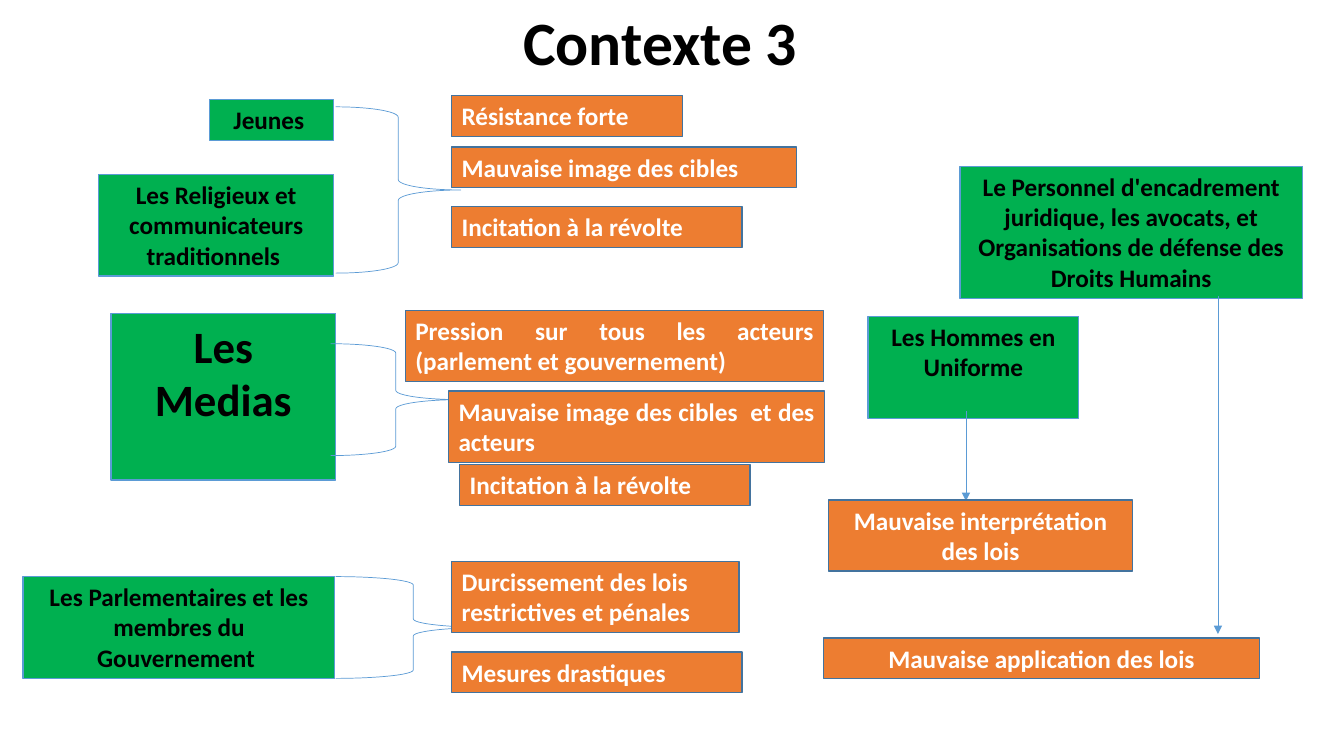
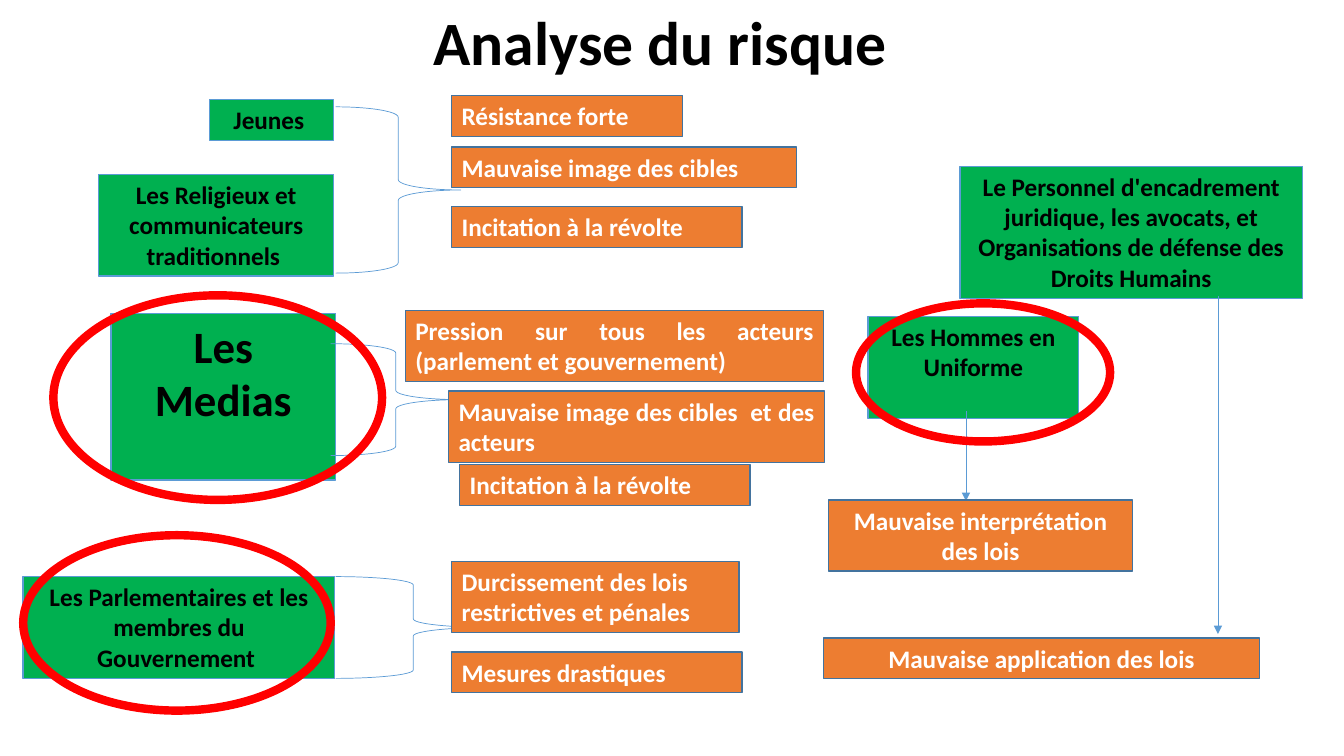
"""Build two stakeholder maps, the second with the main risks circled."""
from pptx import Presentation
from pptx import util as u
from pptx.dml.color import RGBColor
from pptx.enum import shapes, text
from pptx.oxml import parse_xml
from pptx.oxml.ns import nsdecls

COLORS = {"green": "00B050", "orange": "ED7D31", "blue": "5B9BD5",
          "steel": "43739E", "red": "FF0000", "black": "000000", "white": "FFFFFF"}
RGB = {name: RGBColor.from_string(value) for name, value in COLORS.items()}
CELL = u.Inches(0.1)
LINE_ROWS = 3.03
LEFT, CENTER, JUSTIFY = (text.PP_ALIGN.LEFT, text.PP_ALIGN.CENTER, text.PP_ALIGN.JUSTIFY)
KIND = shapes.MSO_SHAPE
EFFECT_COL = 44.8

# column, row, width, lines of height, text size, wording
ACTORS = [
    (20.8, 9.9, 12.3, 1, 18, "Jeunes "),
    (11, 31.1, 22.3, 5.12, 32, "Les Medias"),
    (95.2, 16.5, 34, 4, 18, "Le Personnel d'encadrement juridique, les avocats, et "
                            "Organisations de défense des Droits Humains"),
    (2.3, 57.2, 30.9, 3, 18, "Les Parlementaires et les membres du Gouvernement "),
    (9.8, 17.3, 23.3, 3, 18, "Les Religieux et communicateurs traditionnels "),
    (86.1, 31.4, 20.9, 3, 18, "Les Hommes en Uniforme"),
]
# column, row, width, lines of height, alignment, wording
EFFECTS = [
    (EFFECT_COL, 9.5, 22.9, 1, LEFT, "Résistance forte"),
    (EFFECT_COL, 14.6, 34.2, 1, LEFT, "Mauvaise image des cibles"),
    (EFFECT_COL, 20.5, 28.8, 1, LEFT, "Incitation à la révolte"),
    (44.5, 38.8, 37.3, 2, JUSTIFY, "Mauvaise image des cibles  et des acteurs"),
    (40.2, 30.8, 41.5, 2, JUSTIFY, "Pression sur tous les acteurs (parlement et gouvernement)"),
    (45.6, 46.1, 28.8, 1, LEFT, "Incitation à la révolte"),
    (EFFECT_COL, 55.7, 28.5, 2, LEFT, "Durcissement des lois  restrictives et pénales"),
    (EFFECT_COL, 64.7, 28.8, 1, LEFT, "Mesures drastiques"),
    (82.2, 49.6, 30.1, 2, CENTER, "Mauvaise interprétation des lois"),
    (81.7, 63.3, 43.2, 1, CENTER, "Mauvaise application des lois"),
]
BRACES = [(33.3, 10.6, 12.4, 16.5), (32.8, 34.1, 12.9, 11.1), (33.3, 57.2, 15.4, 10.1)]
ARROWS = [(95.8, 40.8, 49.7), (120.8, 29.4, 62.9)]
CIRCLES = [(5.3, 29.3, 32.6, 20.3), (84.9, 30.1, 25.2, 13.7), (2.3, 53.1, 30.5, 17.4)]
SLIDES = {"Contexte 3": [], "Analyse du risque": CIRCLES}


def add_shape(s, kind, box, line, width, fill=None):
    """Draw a preset shape on grid cells."""
    sp = s.shapes.add_shape(kind, *(round(n * CELL) for n in box))
    sp.shadow.inherit = False
    sp.line.color.rgb = RGB[line]
    sp.line.width = u.Pt(width)
    if fill:
        sp.fill.solid()
        sp.fill.fore_color.rgb = RGB[fill]
    else:
        sp.fill.background()
    return sp


def write(sp, words, size, color, align, anchor):
    """Put one bold paragraph in a shape."""
    tf = sp.text_frame
    tf.word_wrap = True
    tf.vertical_anchor = anchor
    p = tf.paragraphs[0]
    p.alignment = align
    r = p.add_run()
    r.text = words
    for name, value in {"name": "Calibri", "size": u.Pt(size), "bold": True}.items():
        setattr(r.font, name, value)
    r.font.color.rgb = RGB[color]
    return p


prs = Presentation()
prs.slide_width, prs.slide_height = u.Inches(13.33), u.Inches(7.5)

for title, circles in SLIDES.items():
    s = prs.slides.add_slide(prs.slide_layouts[5])
    sp = s.shapes.title
    for name, cells in {"left": 8, "top": 0.7, "width": 115, "height": 7.6}.items():
        setattr(sp, name, round(cells * CELL))
    p = write(sp, title, 44, "black", CENTER, text.MSO_ANCHOR.MIDDLE)
    p.line_spacing = 0.9

    for col, row, width, lines, size, words in ACTORS:
        box = (col, row, width, 1 + lines * LINE_ROWS)
        sp = add_shape(s, KIND.RECTANGLE, box, "blue", 1, "green")
        write(sp, words, size, "black", CENTER, text.MSO_ANCHOR.TOP)

    for box in BRACES:
        add_shape(s, KIND.RIGHT_BRACE, box, "blue", 0.5)

    for col, top, bottom in ARROWS:
        ends = (round(n * CELL) for n in (col, top, col, bottom))
        c = s.shapes.add_connector(shapes.MSO_CONNECTOR.STRAIGHT, *ends)
        c.line.color.rgb = RGB["blue"]
        c.line.width = u.Pt(0.5)
        c.line._get_or_add_ln().append(parse_xml(f'<a:tailEnd {nsdecls("a")} type="triangle"/>'))
        c._element.spPr.append(parse_xml(f'<a:effectLst {nsdecls("a")}/>'))

    for col, row, width, lines, align, words in EFFECTS:
        box = (col, row, width, 1 + lines * LINE_ROWS)
        sp = add_shape(s, KIND.RECTANGLE, box, "steel", 1, "orange")
        write(sp, words, 18, "white", align, text.MSO_ANCHOR.TOP)

    for box in circles:
        add_shape(s, KIND.OVAL, box, "red", 6)

prs.save("out.pptx")
